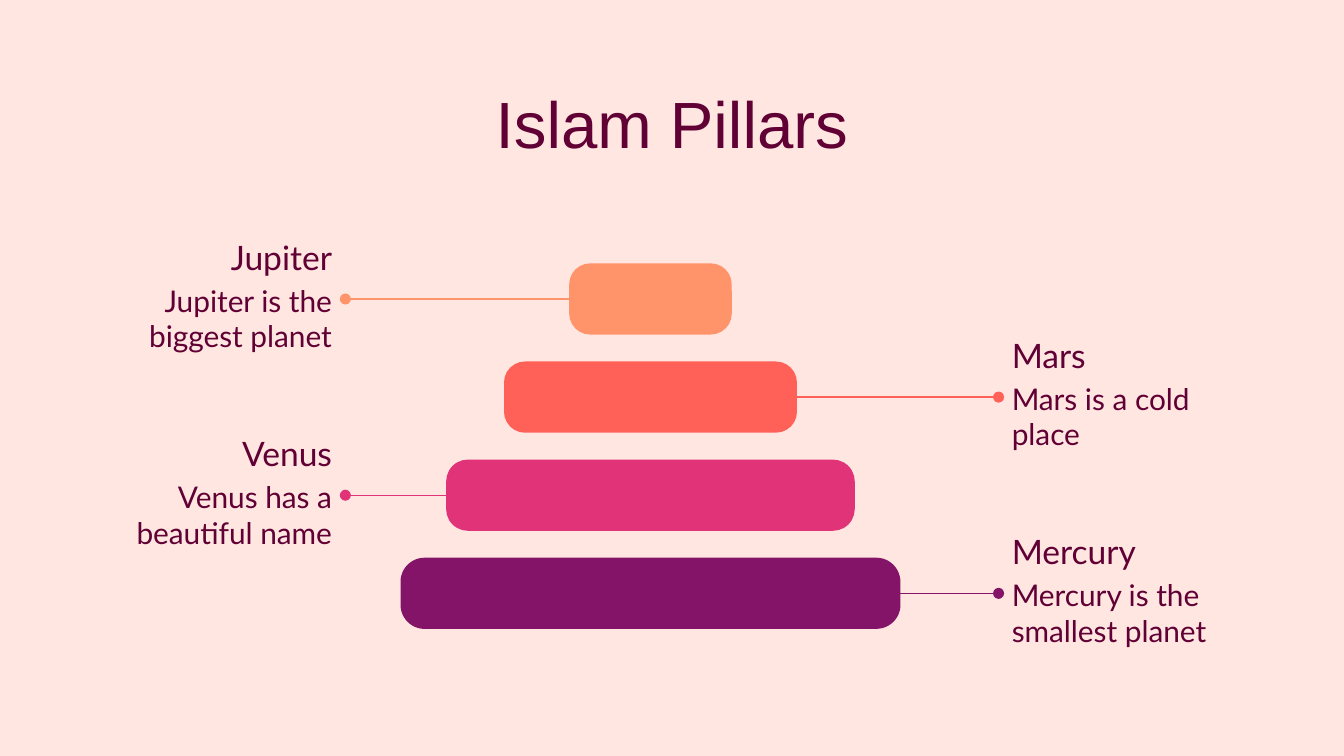
import pptx
import pptx.dml.color
import pptx.enum.shapes
import pptx.enum.text
import pptx.oxml.ns
import pptx.util
from lxml import etree

ALIGN = pptx.enum.text.PP_ALIGN
SHAPE = pptx.enum.shapes.MSO_SHAPE
LINE = pptx.enum.shapes.MSO_CONNECTOR.STRAIGHT


def paint(color_format, hex_color):
    color_format.rgb = pptx.dml.color.RGBColor.from_string(hex_color)


def write(holder, text, size, font="Lato", color="610035", align=ALIGN.LEFT, top=0.1):
    """Fill a shape's text frame with one formatted paragraph."""
    frame = holder.text_frame
    frame.word_wrap = True
    frame.auto_size = pptx.enum.text.MSO_AUTO_SIZE.NONE
    frame.vertical_anchor = pptx.enum.text.MSO_ANCHOR.TOP
    frame.margin_left = frame.margin_right = frame.margin_bottom = pptx.util.Inches(0.1)
    frame.margin_top = pptx.util.Inches(top)
    paragraph = frame.paragraphs[0]
    paragraph.alignment = align
    run = paragraph.add_run()
    run.text = text
    run.font.size = pptx.util.Pt(size)
    run.font.name = font
    paint(run.font.color, color)


deck = pptx.Presentation()
# The grid has 100 columns across; rows are as high as columns are wide.
cell = pptx.util.Inches(0.1)
deck.slide_width, deck.slide_height = 100 * cell, round(56.25 * cell)
slide = deck.slides.add_slide(deck.slide_layouts[5])
slide.background.fill.solid()
paint(slide.background.fill.fore_color, "FFE6E0")

title = slide.shapes.title
title.left, title.top, title.width, title.height = [
    round(cell * n) for n in (3.4, 4.6, 93.2, 6.3)]
write(title, "Islam Pillars", 35, font="Arial", align=ALIGN.CENTER, top=0.16)

pyramid_center, first_row, row_step, bar_height = 48.4, 19.6, 7.3, 5.3
label_width, left_label, right_label = 17.6, 8.1, 74.3
overlap = 2.5  # how far a leader runs in behind its bar

levels = [
    ("Jupiter", "Jupiter is the biggest planet", "FF946B", 12.1, 0.295),
    ("Mars", "Mars is a cold place", "FF6159", 21.8, 0.295),
    ("Venus", "Venus has a beautiful name", "E03378", 30.4, 0.306),
    ("Mercury", "Mercury is the smallest planet", "841467", 37.2, 0.339),
]
for index, (planet, fact, color, bar_width, rounding) in enumerate(levels):
    on_left = index % 2 == 0
    row = first_row + index * row_step
    bar_left = pyramid_center - bar_width / 2
    label_left = left_label if on_left else right_label
    align = ALIGN.RIGHT if on_left else ALIGN.LEFT

    for text, size, offset, height in ((fact, 16, 0.4, 7.2), (planet, 18, -3, 5.1)):
        label = slide.shapes.add_textbox(*[
            round(cell * n) for n in (label_left, row + offset, label_width, height)])
        write(label, text, size, align=align)

    if on_left:
        start, stop, dot_end = left_label + label_width, bar_left + overlap, "a:headEnd"
    else:
        start, stop, dot_end = bar_left + bar_width - overlap, right_label, "a:tailEnd"
    leader_row = row + bar_height / 2
    leader = slide.shapes.add_connector(LINE, *[
        round(cell * n) for n in (start, leader_row, stop, leader_row)])
    leader.line.width = pptx.util.Pt(0.75)
    leader.line.fill.solid()
    paint(leader.line.fill.fore_color, color)
    etree.SubElement(leader.line._get_or_add_ln(), pptx.oxml.ns.qn(dot_end), type="oval")
    etree.SubElement(leader._element.spPr, pptx.oxml.ns.qn("a:effectLst"))

    bar = slide.shapes.add_shape(SHAPE.ROUNDED_RECTANGLE, *[
        round(cell * n) for n in (bar_left, row, bar_width, bar_height)])
    bar.adjustments[0] = rounding
    bar.shadow.inherit = False
    bar.fill.solid()
    paint(bar.fill.fore_color, color)
    bar.line.fill.background()

deck.save("out.pptx")
